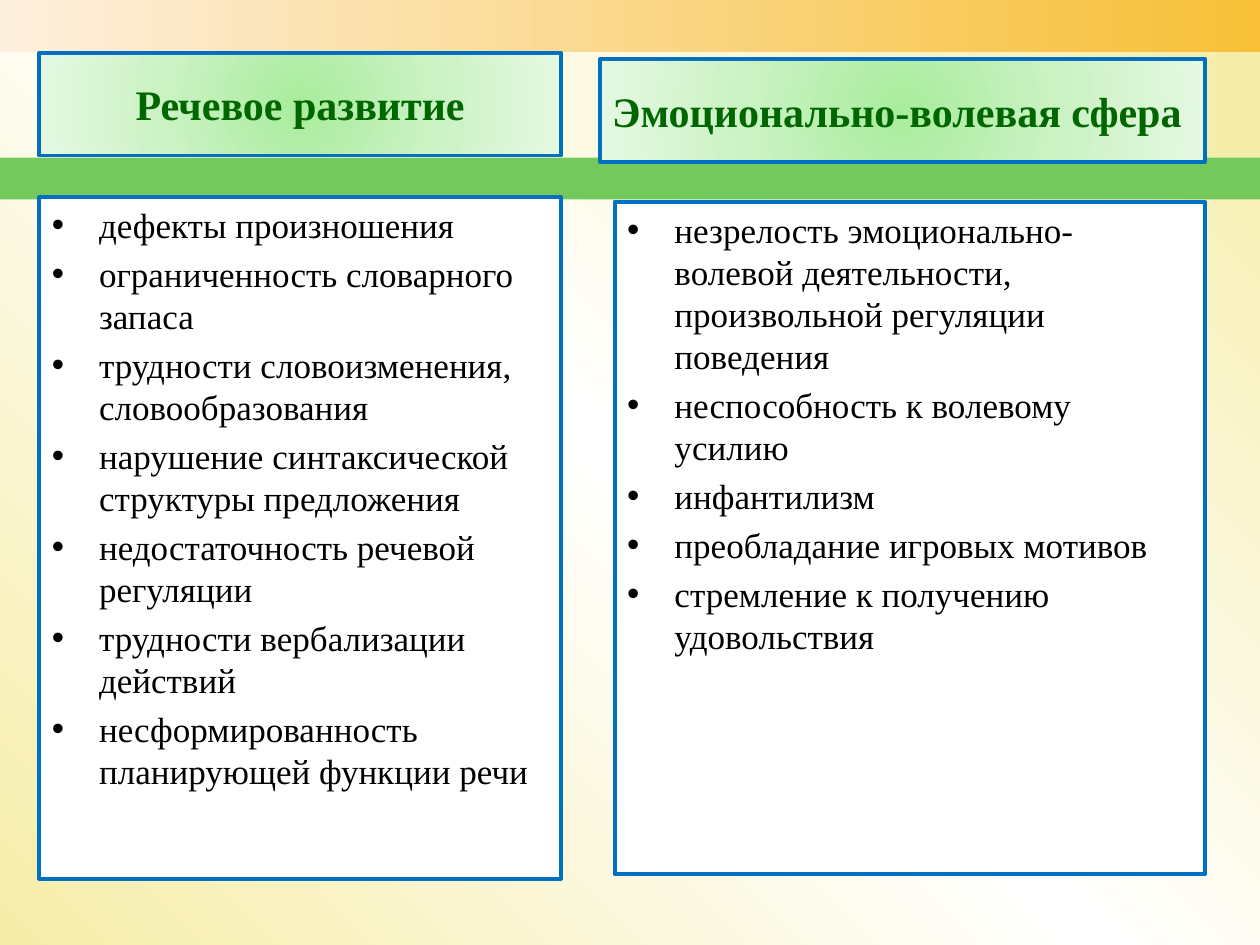
from lxml import etree
from pptx import Presentation
from pptx.dml.color import RGBColor
from pptx.enum import shapes, text
from pptx.oxml.ns import qn
from pptx.util import Pt

# Content
HEADS = ["Речевое развитие", "Эмоционально-волевая сфера"]
LISTS = [
    ["дефекты произношения",
     "ограниченность словарного запаса",
     "трудности словоизменения, словообразования",
     "нарушение синтаксической структуры предложения",
     "недостаточность речевой регуляции",
     "трудности вербализации действий",
     "несформированность планирующей функции речи"],
    ["незрелость эмоционально-волевой деятельности, произвольной регуляции поведения",
     "неспособность к волевому усилию",
     "инфантилизм",
     "преобладание игровых мотивов",
     "стремление к получению удовольствия"],
]

# Theme: colours, type and frames
THEME = {
    "back": ["F6EDA8", "FFFFFF", "F6EDA8"],
    "top": ["FDEFDD", "F7C037"],
    "fade": ["FFFFFF", "F6EDA8"],
    "glow": ["A9EC9D", "CAF2C3", "E5F8E2"],
    "green": "73C95B", "line": "0070C0", "white": "FFFFFF",
    "head": {"name": "Times New Roman", "size": Pt(24), "bold": True},
    "list": {"name": "Times New Roman", "size": Pt(20), "bold": False},
    "headink": "006600", "listink": "000000",
}
FRAME = {"word_wrap": True, "auto_size": text.MSO_AUTO_SIZE.NONE,
         "margin_left": Pt(7.2), "margin_right": Pt(7.2),
         "margin_top": Pt(3.6), "margin_bottom": Pt(3.6)}

# Places in points: left, top, width, height
WIDE, HIGH = 720, 540
BANDS = [((0, 0, WIDE, 30), "top"),
         ((156, 30, WIDE - 156, 60), "fade"),
         ((0, 90, WIDE, 24), "green")]
HEADBOX = [(22.4, 30.1, 298.2, 58.8), (342.7, 33.7, 345.8, 58.8)]
LISTBOX = [(22.4, 112.5, 298.2, 389.6), (351.2, 115.3, 337.3, 384.2)]


def paint(fill, root, tones, angle=None):
    """Spread tones evenly; without an angle they run out from the centre."""
    fill.gradient()
    grad = next(root.iter(qn("a:gradFill")))
    for kid in list(grad):
        grad.remove(kid)
    stops = etree.SubElement(grad, qn("a:gsLst"))
    for i, tone in enumerate(tones):
        stop = etree.SubElement(stops, qn("a:gs"),
                                pos=str(100000 * i // (len(tones) - 1)))
        etree.SubElement(stop, qn("a:srgbClr"), val=tone)
    if angle is None:
        ring = etree.SubElement(grad, qn("a:path"), path="circle")
        mid = dict.fromkeys("ltrb", "50000")
        etree.SubElement(ring, qn("a:fillToRect"), **mid)
    else:
        etree.SubElement(grad, qn("a:lin"), ang=str(angle * 60000), scaled="0")


def color(shape, key, angle=None):
    tone = THEME[key]
    if isinstance(tone, list):
        paint(shape.fill, shape.element, tone, angle)
    else:
        shape.fill.solid()
        shape.fill.fore_color.rgb = RGBColor.from_string(tone)


def place(shape, box):
    for name, value in zip(("left", "top", "width", "height"), box):
        setattr(shape, name, Pt(value))


def panel(shape, box, lines, kind, tone, anchor, align):
    """Framed box with one paragraph for each line."""
    tree.append(shape.element)
    place(shape, box)
    color(shape, tone)
    shape.line.color.rgb = RGBColor.from_string(THEME["line"])
    shape.line.width = Pt(2.25)
    frame = shape.text_frame
    for name, value in {**FRAME, "vertical_anchor": anchor}.items():
        setattr(frame, name, value)
    for i, line in enumerate(lines):
        para = frame.add_paragraph() if i else frame.paragraphs[0]
        para.alignment = align
        para.space_before = Pt(4 if i else 0)
        run = para.add_run()
        run.text = line
        for name, value in THEME[kind].items():
            setattr(run.font, name, value)
        run.font.color.rgb = RGBColor.from_string(THEME[kind + "ink"])


# Slide and background
deck = Presentation()
deck.slide_width, deck.slide_height = Pt(WIDE), Pt(HIGH)
slide = deck.slides.add_slide(deck.slide_layouts[3])
tree = slide.shapes.element
paint(slide.background.fill, slide.element, THEME["back"], 315)

# Bands behind the panels
for box, key in BANDS:
    band = slide.shapes.add_shape(shapes.MSO_SHAPE.RECTANGLE, *map(Pt, box))
    band.shadow.inherit = False
    band.line.fill.background()
    color(band, key, 0)

# Headings and lists, column by column
title, *bodies = slide.placeholders
heads = [title, slide.shapes.add_textbox(0, 0, 0, 0)]
aligns = [text.PP_ALIGN.CENTER, text.PP_ALIGN.LEFT]
for i in range(2):
    panel(heads[i], HEADBOX[i], [HEADS[i]], "head", "glow",
          text.MSO_ANCHOR.MIDDLE, aligns[i])
    panel(bodies[i], LISTBOX[i], LISTS[i], "list", "white",
          text.MSO_ANCHOR.TOP, text.PP_ALIGN.LEFT)

deck.save("out.pptx")
